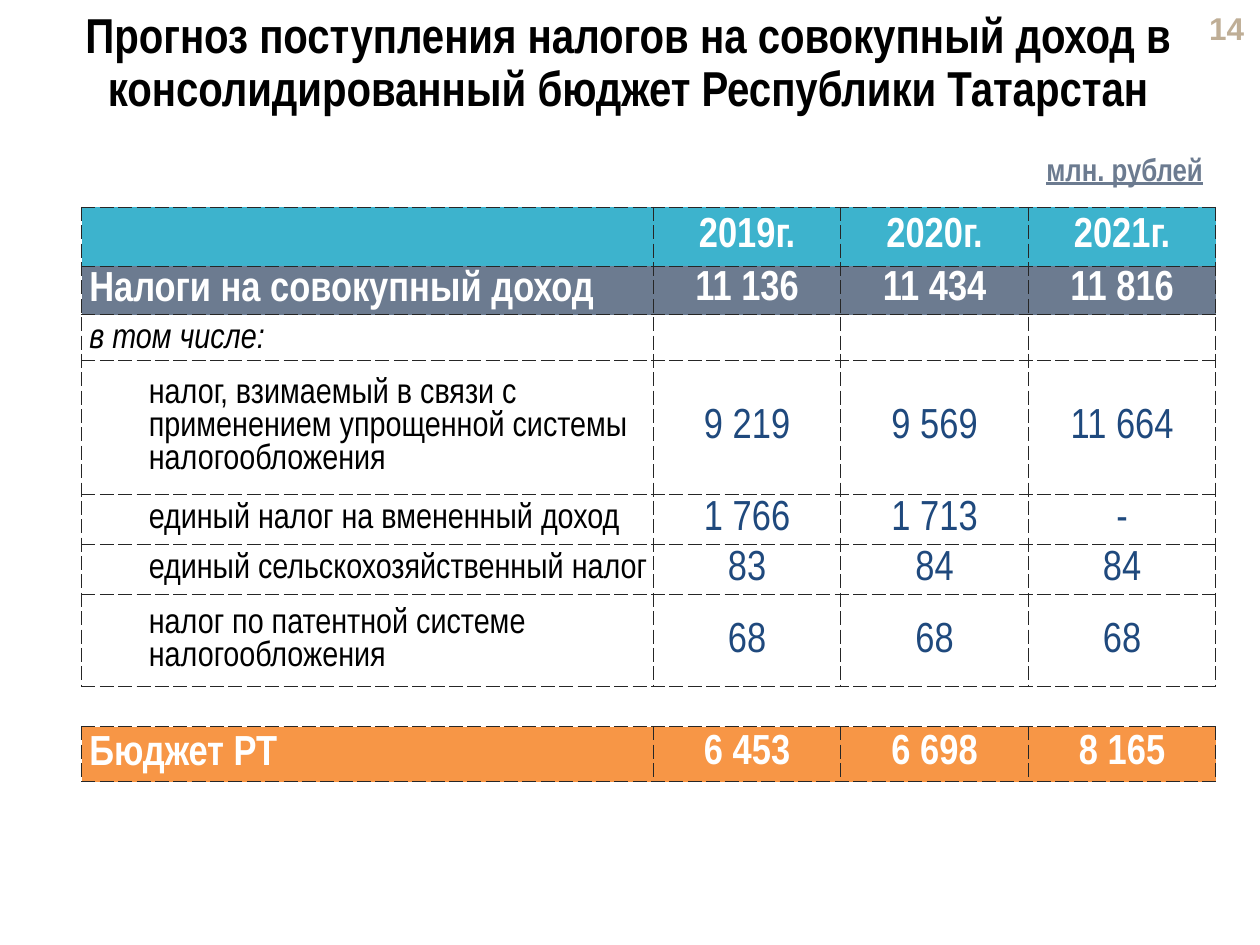
from lxml import etree
from pptx import Presentation
from pptx.dml.color import RGBColor
from pptx.enum.text import MSO_ANCHOR, PP_ALIGN
from pptx.oxml.ns import qn
from pptx.util import Cm, Pt

LEFT, CENTER, RIGHT = PP_ALIGN.LEFT, PP_ALIGN.CENTER, PP_ALIGN.RIGHT
TOP, MIDDLE = MSO_ANCHOR.TOP, MSO_ANCHOR.MIDDLE
FONT = "Arial Narrow"
BLACK = RGBColor(0x00, 0x00, 0x00)
WHITE = RGBColor(0xFF, 0xFF, 0xFF)
TEAL = RGBColor(0x3D, 0xB3, 0xCD)
SLATE = RGBColor(0x6C, 0x7B, 0x90)
ORANGE = RGBColor(0xF7, 0x96, 0x46)
NAVY = RGBColor(0x1F, 0x49, 0x7D)
SAND = RGBColor(0xBF, 0xAE, 0x96)
BORDER = RGBColor(0x26, 0x26, 0x26)

TABLE_LEFT = 1.65
COLUMNS = [11.52, 3.78, 3.78, 3.78]
NUMBER_INSETS = (0.03, 0.03, 0.03, 0)
HEAD_INSETS = (0.15, 0.08, 0.15, 0)
ITEM_INSETS = (0.08, 0.08, 0.08, 0.08)

TAXES = [
    ("head", TEAL, 1.19, ["", "2019г.", "2020г.", "2021г."]),
    ("head", SLATE, 0.97, ["Налоги на совокупный доход", "11 136", "11 434", "11 816"]),
    ("note", None, 0.89, ["в том числе:", "", "", ""]),
    ("item", None, 2.14, ["налог, взимаемый в связи с применением упрощенной системы "
                          "налогообложения", "9 219", "9 569", "11 664"]),
    ("item", None, 0.92, ["единый налог на вмененный доход", "1 766", "1 713", "-"]),
    ("item", None, 0.92, ["единый сельскохозяйственный налог", "83", "84", "84"]),
    ("item", None, 1.67, ["налог по патентной системе налогообложения", "68", "68", "68"]),
]
BUDGET = [("head", ORANGE, 1.11, ["Бюджет РТ", "6 453", "6 698", "8 165"])]


def set_font(p, size, color, bold=False, name=FONT):
    """Set the font of a whole paragraph."""
    p.font.name = name
    p.font.size = Pt(size)
    p.font.bold = bold
    p.font.color.rgb = color


def set_insets(target, insets):
    """Set left, top, right and bottom margins of a cell or text frame."""
    for side, value in zip(("left", "top", "right", "bottom"), insets):
        setattr(target, f"margin_{side}", Cm(value))


def add_text(s, box, text, size, color, align, name=FONT, anchor=TOP):
    """Add a bold one-paragraph text box and return its shape."""
    shape = s.shapes.add_textbox(*map(Cm, box))
    tf = shape.text_frame
    tf.word_wrap = True
    tf.vertical_anchor = anchor
    p = tf.paragraphs[0]
    p.text = text
    p.alignment = align
    set_font(p, size, color, True, name)
    return shape


def add_borders(cell):
    """Give a cell thin dashed borders on all sides."""
    tc_pr = cell._tc.get_or_add_tcPr()
    for side in ("lnL", "lnR", "lnT", "lnB"):
        ln = etree.SubElement(tc_pr, qn(f"a:{side}"), w=str(Pt(0.5)))
        fill = etree.SubElement(ln, qn("a:solidFill"))
        etree.SubElement(fill, qn("a:srgbClr"), val=str(BORDER))
        etree.SubElement(ln, qn("a:prstDash"), val="sysDash")


def fill_cell(cell, text, kind, is_label, color):
    """Write and format one table cell according to its row kind."""
    add_borders(cell)
    if color is None:
        cell.fill.background()
    else:
        cell.fill.solid()
        cell.fill.fore_color.rgb = color
    cell.vertical_anchor = MIDDLE
    p = cell.text_frame.paragraphs[0]
    p.text = text
    p.alignment = LEFT if is_label else CENTER
    if not is_label:
        set_insets(cell, NUMBER_INSETS)
    else:
        set_insets(cell, ITEM_INSETS if kind == "item" else HEAD_INSETS)
    if kind == "head":
        p.line_spacing = 0.8
        set_font(p, 24, WHITE, True)
    elif is_label:
        p.line_spacing = 1.0
        set_font(p, 20, BLACK)
        p.font.italic = kind == "note"
        if kind == "item":
            p._p.get_or_add_pPr().set("marL", str(Cm(1.27)))
    else:
        p.line_spacing = 0.9
        set_font(p, 24 if text else 12, NAVY)


def add_tax_table(s, top, rows):
    """Add a table of label and yearly values."""
    height = sum(row[2] for row in rows)
    table = s.shapes.add_table(len(rows), len(COLUMNS), Cm(TABLE_LEFT), Cm(top),
                               Cm(sum(COLUMNS)), Cm(height)).table
    table.first_row = table.horz_banding = False
    for column, width in zip(table.columns, COLUMNS):
        column.width = Cm(width)
    for i, (kind, color, row_height, texts) in enumerate(rows):
        table.rows[i].height = Cm(row_height)
        for j, text in enumerate(texts):
            fill_cell(table.cell(i, j), text, kind, j == 0, color)


def main():
    """Build the slide and save it."""
    prs = Presentation()
    prs.slide_width, prs.slide_height = Cm(25.4), Cm(19.05)
    s = prs.slides.add_slide(prs.slide_layouts[6])
    add_text(s, (23.7, 0.13, 1.63, 0.86), "14", 18, SAND, RIGHT, "Arial", MIDDLE)
    title = add_text(s, (1.42, 0.13, 22.48, 1.6),
                     "Прогноз поступления налогов на совокупный доход в "
                     "консолидированный бюджет Республики Татарстан", 28, BLACK, CENTER)
    set_insets(title.text_frame, (0.18, 0.1, 0.18, 0.1))
    title.text_frame.paragraphs[0].line_spacing = 0.9
    add_tax_table(s, 4.18, TAXES)
    unit = add_text(s, (20.02, 2.9, 4.48, 1.02), "млн. рублей", 18, SLATE, RIGHT)
    unit.text_frame.paragraphs[0].font.underline = True
    add_tax_table(s, 14.65, BUDGET)
    prs.save("out.pptx")


if __name__ == "__main__":
    main()
